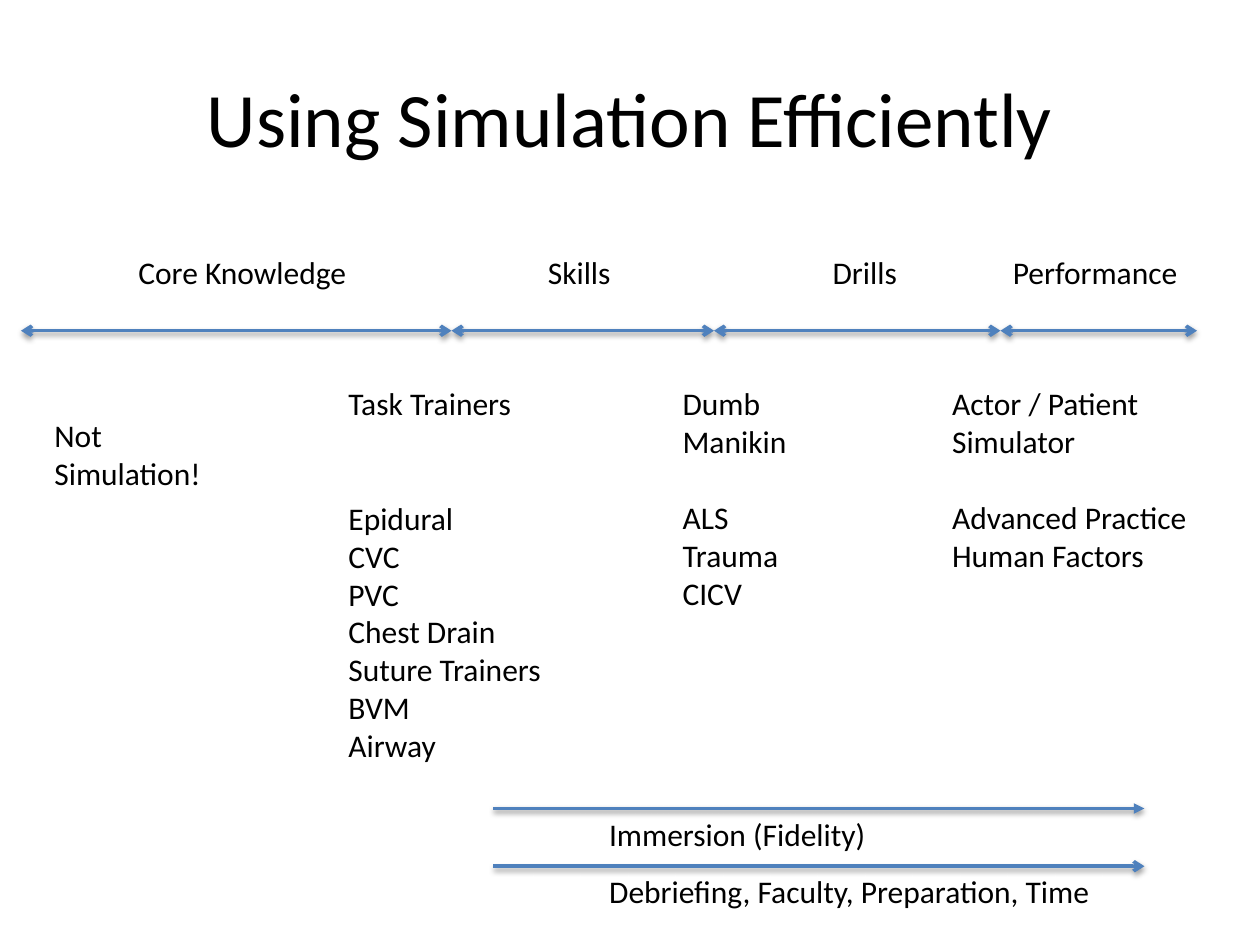
from itertools import pairwise

from lxml import etree
from pptx import Presentation
from pptx import util as u
from pptx.dml.color import RGBColor
from pptx.enum import shapes, text
from pptx.oxml import ns

FONT, BLACK, BLUE = "Calibri", "000000", "4F81BD"
LINE_HEIGHT = 22


def color(hex_str):
    return RGBColor.from_string(hex_str)


def add_run(p, content, size=18):
    r = p.add_run()
    r.text = content
    r.font.name, r.font.size = FONT, u.Pt(size)
    r.font.color.rgb = color(BLACK)


def add_title(s, content):
    sp = s.shapes.title
    sp.left, sp.top, sp.width, sp.height = map(u.Pt, (36, 21.6, 648, 90))
    tf = sp.text_frame
    tf.vertical_anchor = text.MSO_ANCHOR.MIDDLE
    p = tf.paragraphs[0]
    p.alignment = text.PP_ALIGN.CENTER
    add_run(p, content, 44)


def add_text(s, x, y, w, h, heading, items=(), gap=0):
    """Add a heading with optional items, set apart by gap lines."""
    tf = s.shapes.add_textbox(*map(u.Pt, (x, y, w, h))).text_frame
    tf.word_wrap = True
    add_run(tf.paragraphs[0], heading)
    for i, item in enumerate(items):
        p = tf.add_paragraph()
        if i == 0:
            p.space_before = u.Pt(gap * LINE_HEIGHT)
        add_run(p, item)


def add_arrow(s, x1, x2, y, tail="arrow", head=None):
    sp = s.shapes.add_connector(
        shapes.MSO_CONNECTOR.STRAIGHT, *map(u.Pt, (x1, y, x2, y)))
    sp.line.color.rgb = color(BLUE)
    sp.line.width = u.Pt(2)
    ln = sp.line._get_or_add_ln()
    for tag, kind in (("a:headEnd", head), ("a:tailEnd", tail)):
        if kind:
            etree.SubElement(ln, ns.qn(tag), type=kind)
    # Soft shadow straight below the line
    effects = etree.SubElement(sp._element.spPr, ns.qn("a:effectLst"))
    shadow = etree.SubElement(
        effects, ns.qn("a:outerShdw"), blurRad=str(u.Pt(3.1)),
        dist=str(u.Pt(1.6)), dir="5400000", rotWithShape="0")
    clr = etree.SubElement(shadow, ns.qn("a:srgbClr"), val=BLACK)
    etree.SubElement(clr, ns.qn("a:alpha"), val="38000")


def main():
    prs = Presentation()
    prs.slide_width, prs.slide_height = u.Pt(720), u.Pt(540)
    s = prs.slides.add_slide(prs.slide_layouts[5])
    add_title(s, "Using Simulation Efficiently")

    # Stages along the axis
    for x, w, name in ((72, 144, "Core Knowledge"), (306, 78, "Skills"),
                       (468.7, 53.3, "Drills"), (571.7, 112.3, "Performance")):
        add_text(s, x, 141, w, 30, name)
    for x1, x2 in pairwise((12, 258, 408, 571.7, 684)):
        add_arrow(s, x1, x2, 189, head="arrow")

    # Training methods under each stage
    add_text(s, 24, 234, 114, 51, "Not Simulation!")
    add_text(s, 192, 216, 132, 225, "Task Trainers",
             ("Epidural", "CVC", "PVC", "Chest Drain", "Suture Trainers",
              "BVM", "Airway"), gap=2)
    add_text(s, 383, 216, 114, 138, "Dumb Manikin",
             ("ALS", "Trauma", "CICV"), gap=1)
    add_text(s, 537, 216, 169, 138, "Actor / Patient Simulator",
             ("Advanced Practice", "Human Factors"), gap=1)

    # Rising demands
    for y, w, label, tail in (
            (462, 202, "Immersion (Fidelity)", "triangle"),
            (495, 312, "Debriefing, Faculty, Preparation, Time", "arrow")):
        add_arrow(s, 282, 654, y, tail)
        add_text(s, 341, y, w, 29, label)

    prs.save("out.pptx")


if __name__ == "__main__":
    main()
